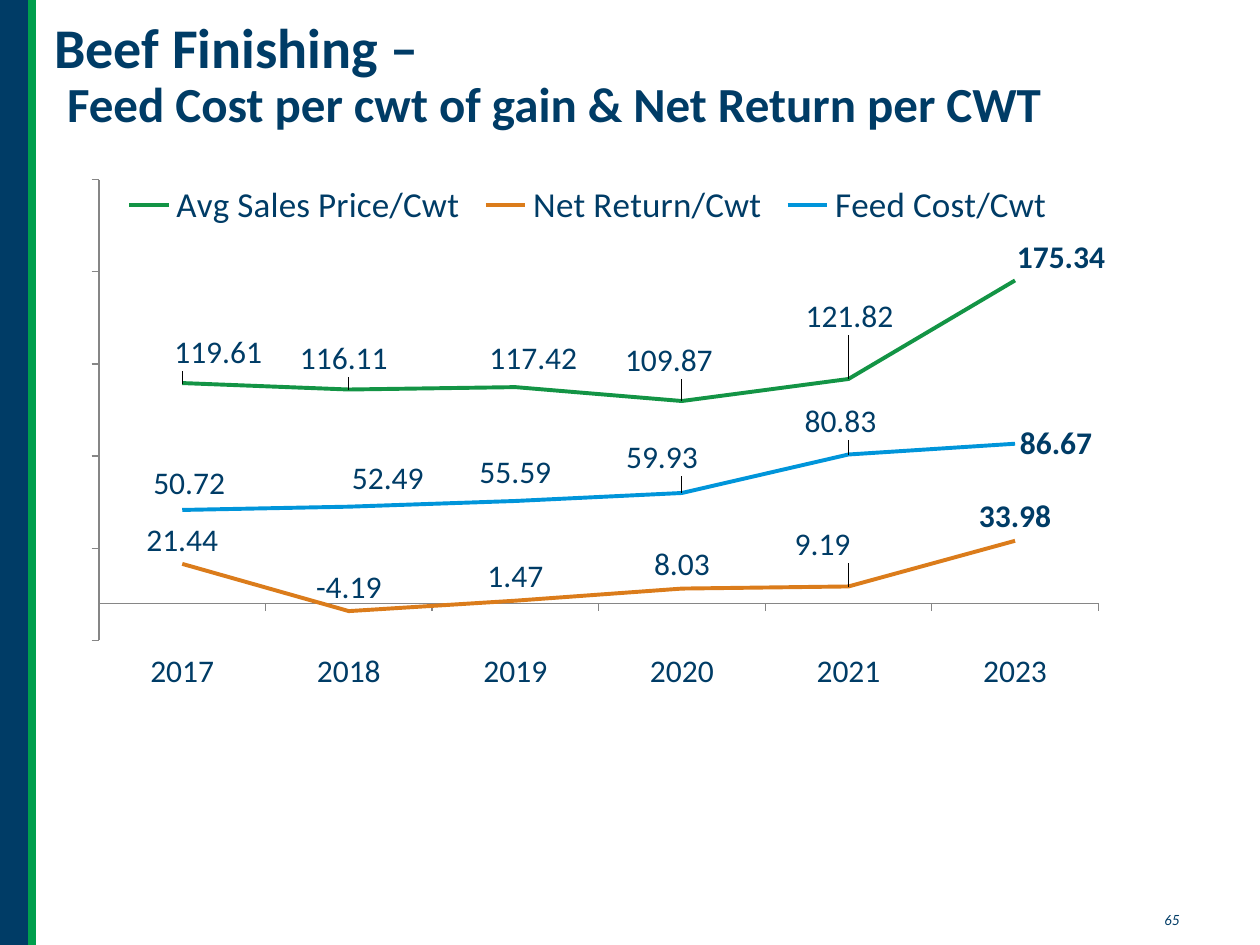
import pptx
import pptx.chart.data
import pptx.dml.color
import pptx.enum.chart
import pptx.enum.shapes
import pptx.enum.text
import pptx.oxml
import pptx.oxml.ns
import pptx.util

PAGE_WIDTH, PAGE_HEIGHT = 1260, 945
COLORS = {
    "navy": "003C66",
    "stripe": "009F4D",
    "sales": "139445",
    "net": "DB7C1B",
    "feed": "0095DA",
    "axis": "868686",
}
YEARS = ["2017", "2018", "2019", "2020", "2021", "2023"]
SERIES = [
    ("Avg Sales Price/Cwt", "sales", [119.61, 116.11, 117.42, 109.87, 121.82, 175.34],
     [(36, -7), (-5, -7), (18, -5), (-13, -17), (1, -39), (46, 1)]),
    ("Net Return/Cwt", "net", [21.44, -4.19, 1.47, 8.03, 9.19, 33.98],
     [(0, 0), (0, 0), (0, 0), (0, 0), (-26, -18), (0, 0)]),
    ("Feed Cost/Cwt", "feed", [50.72, 52.49, 55.59, 59.93, 80.83, 86.67],
     [(7, -3), (39, -4), (0, -5), (-20, -12), (-8, -9), (41, 24)]),
]


def px(count):
    return pptx.util.Emu(round(count * 914400 / 126))


def color(name):
    return pptx.dml.color.RGBColor.from_string(COLORS[name])


def style_font(font, size=None, bold=None, italic=None, face="Calibri"):
    font.name = face
    font.color.rgb = color("navy")
    font.bold = bold
    font.italic = italic
    if size:
        font.size = pptx.util.Pt(size)


def make_layout(**values):
    layout = pptx.oxml.parse_xml(
        f"<c:layout {pptx.oxml.ns.nsdecls('c')}><c:manualLayout/></c:layout>")
    for tag, value in values.items():
        node = layout[0].makeelement(pptx.oxml.ns.qn(f"c:{tag}"), {"val": str(value)})
        layout[0].append(node)
    return layout


def place_part(element, **values):
    old = element.find(pptx.oxml.ns.qn("c:layout"))
    if old is not None:
        element.remove(old)
    element.insert(0, make_layout(xMode="edge", yMode="edge", **values))


def add_text(page, left, top, width, height):
    box = page.shapes.add_textbox(px(left), px(top), px(width), px(height))
    box.text_frame.word_wrap = True
    return box.text_frame


def add_side_band(page, left, top, width, height):
    band = page.shapes.add_shape(
        pptx.enum.shapes.MSO_SHAPE.RECTANGLE, px(left), px(top), px(width), px(height))
    band.shadow.inherit = False
    band.fill.solid()
    band.fill.fore_color.rgb = color("navy")
    band.line.fill.background()
    stripe = page.shapes.add_connector(
        pptx.enum.shapes.MSO_CONNECTOR.STRAIGHT,
        px(left + width), px(top), px(left + width), px(top + height))
    stripe.line.color.rgb = color("stripe")
    stripe.line.width = pptx.util.Pt(4.5)
    properties = stripe._element.spPr
    properties.append(properties.makeelement(pptx.oxml.ns.qn("a:effectLst"), {}))


def add_title(page, left, top, width, height):
    frame = add_text(page, left, top, width, height)
    frame.vertical_anchor = pptx.enum.text.MSO_ANCHOR.MIDDLE
    para = frame.paragraphs[0]
    para.line_spacing = 0.8
    style_font(para.font, bold=True)
    for text, size in (("Beef Finishing –\v ", 32),
                       ("Feed Cost per cwt of gain & Net Return per CWT", 28)):
        for index, part in enumerate(text.split("\v")):
            if index:
                para.add_line_break()
            span = para.add_run()
            span.text = part
            span.font.size = pptx.util.Pt(size)


def add_page_number(page, left, top, width, height):
    para = add_text(page, left, top, width, height).paragraphs[0]
    para.text = "65"
    style_font(para.font, 8, italic=True, face="Lato")


def style_axes(chart):
    tick = pptx.enum.chart.XL_TICK_MARK
    label = pptx.enum.chart.XL_TICK_LABEL_POSITION
    for axis, position in ((chart.category_axis, label.LOW), (chart.value_axis, label.NONE)):
        axis.has_major_gridlines = False
        axis.major_tick_mark = tick.OUTSIDE
        axis.minor_tick_mark = tick.NONE
        axis.tick_label_position = position
        axis.format.line.color.rgb = color("axis")
        axis.format.line.width = pptx.util.Pt(0.75)
    chart.value_axis.minimum_scale = -20
    chart.value_axis.maximum_scale = 230
    chart.value_axis.major_unit = 50


def style_series(series, tint, shifts, width, height):
    series.smooth = False
    series.marker.style = pptx.enum.chart.XL_MARKER_STYLE.NONE
    series.format.line.color.rgb = color(tint)
    series.format.line.width = pptx.util.Pt(2.25)
    for index, (across, down) in enumerate(shifts):
        label = series.points[index].data_label
        style_font(label.font, 18, bold=index == len(shifts) - 1)
        label.position = pptx.enum.chart.XL_LABEL_POSITION.ABOVE
        if across or down:
            element = series._element.dLbls.get_dLbl_for_point(index)
            element.insert(1, make_layout(x=round(across / width, 4), y=round(down / height, 4)))


def add_cost_chart(page, left, top, width, height):
    chart_data = pptx.chart.data.CategoryChartData()
    chart_data.categories = YEARS
    for name, tint, values, shifts in SERIES:
        chart_data.add_series(name, values)
    chart = page.shapes.add_chart(
        pptx.enum.chart.XL_CHART_TYPE.LINE,
        px(left), px(top), px(width), px(height), chart_data).chart
    chart.has_title = False
    chart.plots[0].vary_by_categories = False
    style_font(chart.font, 18)
    style_axes(chart)
    for series, (name, tint, values, shifts) in zip(chart.plots[0].series, SERIES):
        style_series(series, tint, shifts, width, height)
    chart.has_legend = True
    chart.legend.position = pptx.enum.chart.XL_LEGEND_POSITION.BOTTOM
    chart.legend.include_in_layout = True
    style_font(chart.legend.font, 20)
    legend = chart.legend._element
    legend.remove(legend.find(pptx.oxml.ns.qn("c:layout"))) if legend.find(
        pptx.oxml.ns.qn("c:layout")) is not None else None
    legend.insert(1, make_layout(xMode="edge", yMode="edge", x=0.04, y=0.04, w=0.91, h=0.09))
    place_part(chart._chartSpace.chart.plotArea, layoutTarget="inner",
               x=0.025, y=0.039, w=0.961, h=0.824)
    plot_layout = chart._chartSpace.chart.plotArea[0][0]
    plot_layout.insert(0, plot_layout.find(pptx.oxml.ns.qn("c:layoutTarget")))


def main():
    deck = pptx.Presentation()
    deck.slide_width, deck.slide_height = px(PAGE_WIDTH), px(PAGE_HEIGHT)
    page = deck.slides.add_slide(deck.slide_layouts[6])
    add_page_number(page, 1152, 905, 57, 30)
    add_side_band(page, 0, 0, 32, PAGE_HEIGHT)
    add_cost_chart(page, 73, 158, 1040, 559)
    add_title(page, 42, 0, 1040, 158)
    deck.save("out.pptx")


if __name__ == "__main__":
    main()
